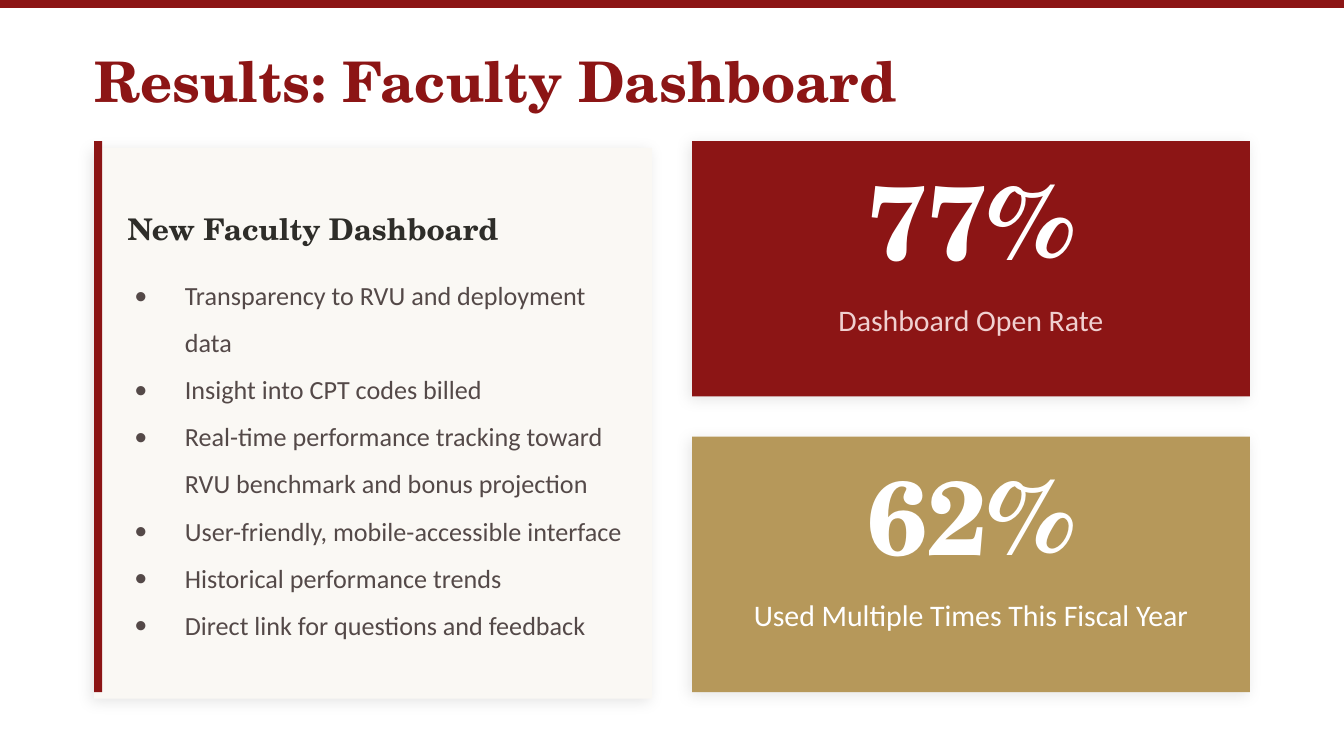
from lxml.etree import SubElement
from pptx import Presentation
from pptx.dml.color import RGBColor
from pptx.enum.shapes import MSO_SHAPE
from pptx.enum.text import MSO_ANCHOR, PP_ALIGN
from pptx.oxml.ns import qn
from pptx.util import Emu, Pt

EMU_PER_PX = 4572
COLORS = {
    "cardinal": "8C1515",
    "gold": "B6985A",
    "cream": "FAF8F4",
    "ink": "2E2D29",
    "body": "544948",
    "blush": "F0D0D0",
    "white": "FFFFFF",
    "shadow": "000000",
}
SERIF = "TeX Gyre Schola"
SANS = "Calibri"
FORMATS = {
    "title": {"name": SERIF, "size": Pt(30), "bold": True},
    "heading": {"name": SERIF, "size": Pt(16), "bold": True},
    "figure": {"name": SERIF, "size": Pt(56), "bold": True},
    "caption": {"name": SANS, "size": Pt(16)},
    "bullet": {"name": SANS, "size": Pt(14)},
}


def px(length):
    return Emu(length * EMU_PER_PX)


def rgb(color):
    return RGBColor.from_string(COLORS[color])


class SlideBuilder:
    def __init__(self, page):
        self.page = page

    def panel(self, left, top, width, height, color, shadow=False):
        box = self.page.shapes.add_shape(
            MSO_SHAPE.RECTANGLE, px(left), px(top), px(width), px(height))
        box.fill.solid()
        box.fill.fore_color.rgb = rgb(color)
        box.line.fill.background()
        box.shadow.inherit = False
        if shadow:
            self.cast_shadow(box)

    def cast_shadow(self, box):
        effects = box.element.spPr.find(qn("a:effectLst"))
        outer = SubElement(effects, qn("a:outerShdw"), {
            "blurRad": str(Pt(8)), "dist": str(Pt(2)), "dir": str(135 * 60000),
            "algn": "bl", "rotWithShape": "0"})
        tint = SubElement(outer, qn("a:srgbClr"), val=COLORS["shadow"])
        SubElement(tint, qn("a:alpha"), val="10000")

    def text(self, left, top, width, height, lines, style, color,
             align=PP_ALIGN.LEFT, bulleted=False):
        box = self.page.shapes.add_textbox(px(left), px(top), px(width), px(height))
        frame = box.text_frame
        settings = {"word_wrap": True, "vertical_anchor": MSO_ANCHOR.MIDDLE,
                    "margin_left": 0, "margin_top": 0,
                    "margin_right": 0, "margin_bottom": 0}
        for key, value in settings.items():
            setattr(frame, key, value)
        for index, line in enumerate(lines):
            para = frame.add_paragraph() if index else frame.paragraphs[0]
            para.alignment = align
            if bulleted:
                self.bullet(para)
            span = para.add_run()
            span.text = line
            for key, value in FORMATS[style].items():
                setattr(span.font, key, value)
            span.font.color.rgb = rgb(color)

    def bullet(self, para):
        para.line_spacing = 1.5
        properties = para._p.get_or_add_pPr()
        properties.set("marL", str(px(75)))
        properties.set("indent", str(-px(75)))
        SubElement(properties, qn("a:buSzPct"), val="100000")
        SubElement(properties, qn("a:buFont"), typeface=SANS)
        SubElement(properties, qn("a:buChar"), char="•")

    def stat(self, left, top, width, height, figure, caption, fill, caption_color):
        self.panel(left, top, width, height, fill, shadow=True)
        self.text(left, top + 10, width, 210, [figure], "figure", "white",
                  PP_ALIGN.CENTER)
        self.text(left, top + 210, width, 110, [caption], "caption", caption_color,
                  PP_ALIGN.CENTER)


def main():
    deck = Presentation()
    deck.slide_width, deck.slide_height = px(2000), px(1125)
    builder = SlideBuilder(deck.slides.add_slide(deck.slide_layouts[6]))

    margin, top, column, gap = 140, 210, 830, 60
    card_height = 820
    stat_height = (card_height - gap) // 2
    builder.panel(0, 0, 2000, 12, "cardinal")
    builder.text(margin, 60, 1720, 120, ["Results: Faculty Dashboard"],
                 "title", "cardinal")

    builder.panel(margin, top + 10, column, card_height, "cream", shadow=True)
    builder.panel(margin, top, 12, card_height, "cardinal")
    builder.text(190, 300, 730, 80, ["New Faculty Dashboard"], "heading", "ink")
    features = [
        "Transparency to RVU and deployment data",
        "Insight into CPT codes billed",
        "Real-time performance tracking toward RVU benchmark and bonus projection",
        "User-friendly, mobile-accessible interface",
        "Historical performance trends",
        "Direct link for questions and feedback",
    ]
    builder.text(200, 356, 730, 634, features, "bullet", "body", bulleted=True)

    stats = [
        ("77%", "Dashboard Open Rate", "cardinal", "blush"),
        ("62%", "Used Multiple Times This Fiscal Year", "gold", "white"),
    ]
    for row, stat in enumerate(stats):
        builder.stat(margin + column + gap, top + row * (stat_height + gap),
                     column, stat_height, *stat)

    deck.save("out.pptx")


if __name__ == "__main__":
    main()
